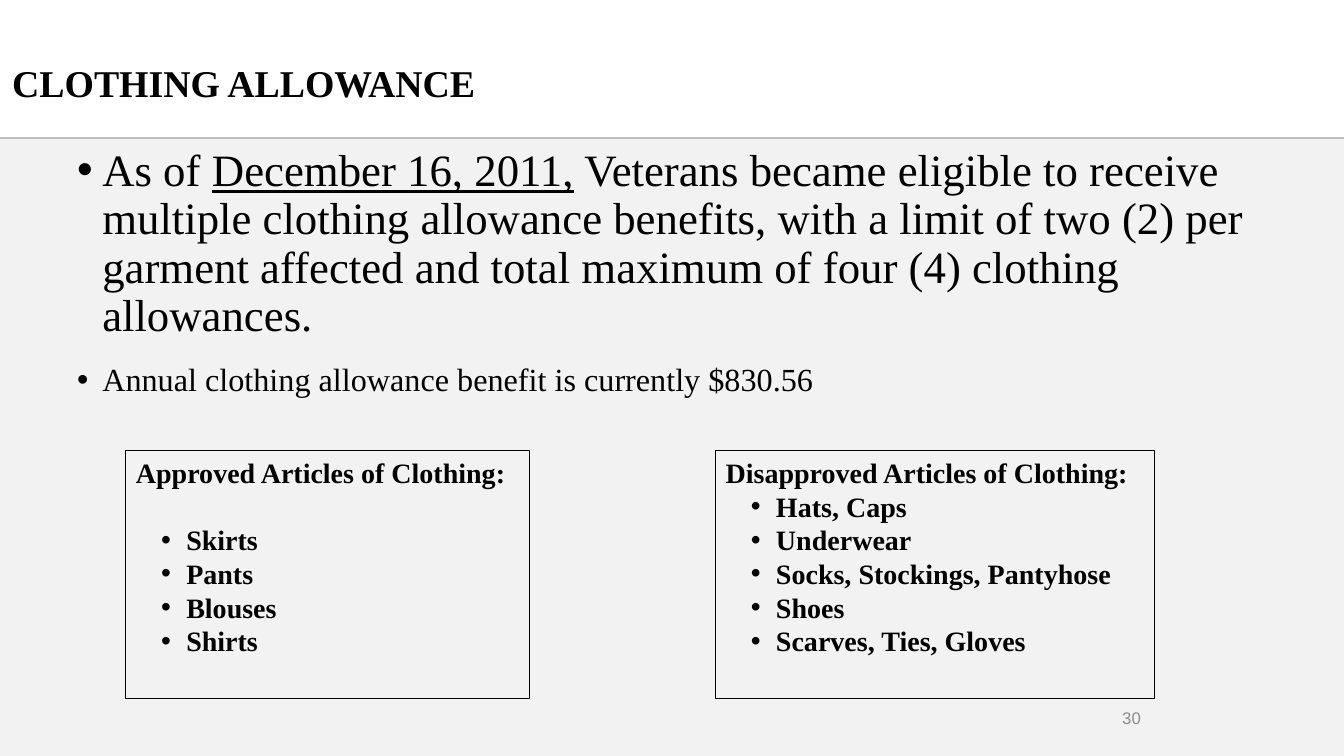
import pptx
import pptx.dml.color
import pptx.enum.shapes
import pptx.enum.text
import pptx.oxml
import pptx.oxml.ns
import pptx.util

ALIGN = pptx.enum.text.PP_ALIGN
ANCHOR = pptx.enum.text.MSO_ANCHOR
SERIF = "Times New Roman"
CELL = pptx.util.Inches(1 / 12)  # the slide is a grid of 160 columns by 90 rows
COLUMNS, ROWS = 160, 90
HEADER_ROWS = 16.4


def grid(*cells):
    return [round(cell * CELL) for cell in cells]


def colour(hex_string):
    return pptx.dml.color.RGBColor.from_string(hex_string)


def add_run(paragraph, text, size, font=SERIF, ink="000000", bold=False, underline=False):
    run = paragraph.add_run()
    run.text = text
    run.font.name = font
    run.font.size = pptx.util.Pt(size)
    run.font.color.rgb = colour(ink)
    run.font.bold = bold
    run.font.underline = underline


def add_bullet(paragraph, left):
    """Hang a bullet three columns before the text, which starts at column left."""
    properties = paragraph._p.get_or_add_pPr()
    margin, hang = grid(left, -3)
    properties.set("marL", str(margin))
    properties.set("indent", str(hang))
    namespace = pptx.oxml.ns.nsdecls("a")
    for element in ('buFont typeface="Arial"', 'buChar char="•"'):
        properties.append(pptx.oxml.parse_xml(f"<a:{element} {namespace}/>"))


def next_paragraph(frame, index):
    return frame.paragraphs[0] if index == 0 else frame.add_paragraph()


def add_backdrop(slide, box):
    left, top, width, height = grid(*box)
    panel = slide.shapes.add_shape(
        pptx.enum.shapes.MSO_SHAPE.RECTANGLE, left, top, width, height)
    panel.shadow.inherit = False
    panel.fill.solid()
    panel.fill.fore_color.rgb = colour("F2F2F2")
    panel.line.fill.background()

    rule = slide.shapes.add_connector(
        pptx.enum.shapes.MSO_CONNECTOR.STRAIGHT, left, top, left + width, top)
    rule.line.color.rgb = colour("BFBFBF")
    rule.line.width = pptx.util.Pt(1.5)
    rule._element.spPr.append(
        pptx.oxml.parse_xml(f'<a:effectLst {pptx.oxml.ns.nsdecls("a")}/>'))


def add_title(slide, box, text):
    title = slide.shapes.title
    title.left, title.top, title.width, title.height = grid(*box)
    title.text_frame.vertical_anchor = ANCHOR.MIDDLE
    heading = title.text_frame.paragraphs[0]
    heading.alignment = ALIGN.LEFT
    add_run(heading, text, 27, bold=True)


def add_rules_of_benefit(slide, box, points):
    frame = slide.shapes.add_textbox(*grid(*box)).text_frame
    frame.word_wrap = True
    for index, (size, pieces) in enumerate(points):
        point = next_paragraph(frame, index)
        add_bullet(point, 3)
        point.line_spacing = 0.9
        point.space_after = pptx.util.Pt(6)
        if index:
            point.space_before = pptx.util.Pt(10)
        for text, underline in pieces:
            add_run(point, text, size, underline=underline)


def add_clothing_list(slide, box, heading, articles, gap=0):
    """Frame a heading and its articles, with gap points between them."""
    card = slide.shapes.add_shape(pptx.enum.shapes.MSO_SHAPE.RECTANGLE, *grid(*box))
    card.shadow.inherit = False
    card.fill.background()
    card.line.color.rgb = colour("000000")
    card.line.width = pptx.util.Pt(0.75)
    frame = card.text_frame
    frame.word_wrap = True
    frame.vertical_anchor = ANCHOR.TOP
    for index, text in enumerate([heading, *articles]):
        entry = next_paragraph(frame, index)
        entry.alignment = ALIGN.LEFT
        if index:
            entry.level = 1
            add_bullet(entry, 6)
        else:
            entry.space_after = pptx.util.Pt(gap)
        add_run(entry, text, 20, bold=True)


def add_page_number(slide, box, number):
    frame = slide.shapes.add_textbox(*grid(*box)).text_frame
    frame.word_wrap = True
    frame.vertical_anchor = ANCHOR.MIDDLE
    frame.paragraphs[0].alignment = ALIGN.RIGHT
    add_run(frame.paragraphs[0], number, 12, font="Arial", ink="8C8C8C")


def main():
    deck = pptx.Presentation()
    deck.slide_width, deck.slide_height = grid(COLUMNS, ROWS)
    slide = deck.slides.add_slide(deck.slide_layouts[5])

    add_backdrop(slide, (0, HEADER_ROWS, COLUMNS, ROWS - HEADER_ROWS))
    add_title(slide, (0.25, 5, 107.6, 9.6), "CLOTHING ALLOWANCE")
    add_rules_of_benefit(slide, (8, 17, 144, 38.6), [
        (32, [("As of ", False),
              ("December 16, 2011,", True),
              (" Veterans became eligible to receive multiple clothing allowance "
               "benefits, with a limit of two (2) per garment affected and total "
               "maximum of four (4) clothing allowances.", False)]),
        (23, [("Annual clothing allowance benefit is currently $830.56", False)]),
    ])
    list_top, list_height = 53.65, 29.5
    add_clothing_list(slide, (15, list_top, 48, list_height),
                      "Approved Articles of Clothing:",
                      ["Skirts", "Pants", "Blouses", "Shirts"], gap=24)
    add_clothing_list(slide, (85.2, list_top, 52.2, list_height),
                      "Disapproved Articles of Clothing:",
                      ["Hats, Caps", "Underwear", "Socks, Stockings, Pantyhose",
                       "Shoes", "Scarves, Ties, Gloves"])
    add_page_number(slide, (110, 83, 27, 4.8), "30")
    deck.save("out.pptx")


if __name__ == "__main__":
    main()
